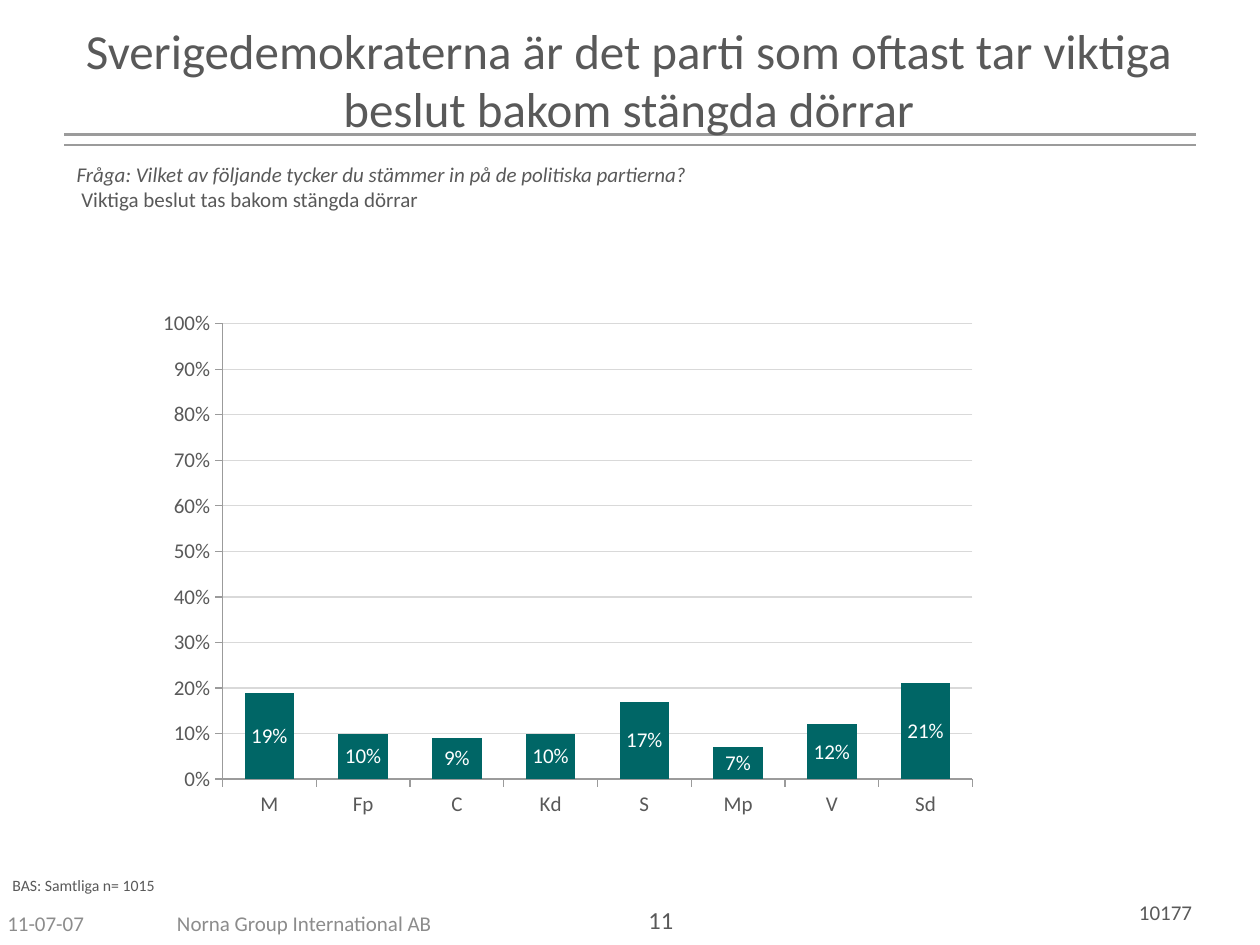
"""Build a slide with a column chart of parties seen as deciding behind closed doors."""
from lxml.etree import SubElement
from pptx import Presentation
from pptx.chart.data import CategoryChartData
from pptx.dml.color import RGBColor
from pptx.enum.chart import XL_CHART_TYPE, XL_LABEL_POSITION, XL_TICK_MARK
from pptx.enum.shapes import MSO_CONNECTOR
from pptx.enum.text import MSO_ANCHOR, PP_ALIGN
from pptx.oxml.ns import qn
from pptx.util import Inches, Pt

COLORS = {
    "text": "595959",
    "footer": "8C8C8C",
    "rule": "9B9B9B",
    "grid": "D9D9D9",
    "bar": "006666",
    "label": "FFFFFF",
}
SHARES = {"M": 0.19, "Fp": 0.1, "C": 0.09, "Kd": 0.1, "S": 0.17, "Mp": 0.07, "V": 0.12, "Sd": 0.21}
PLOT_AREA = {"x": 0.071, "y": 0.143, "w": 0.774, "h": 0.729}


def color(name):
    """Return the named colour."""
    return RGBColor.from_string(COLORS[name])


def style_font(font, size, color_name="text"):
    """Set the typeface, size and colour of a font."""
    font.name = "Calibri"
    font.size = Pt(size)
    font.color.rgb = color(color_name)


def add_text(page, place, text, size, align=PP_ALIGN.LEFT, anchor=MSO_ANCHOR.TOP, color_name="text"):
    """Add a wrapped text box and return its paragraph."""
    box = page.shapes.add_textbox(*map(Inches, place))
    frame = box.text_frame
    frame.word_wrap = True
    frame.vertical_anchor = anchor
    para = frame.paragraphs[0]
    para.alignment = align
    style_font(para.font, size, color_name)
    para.add_run().text = text
    return para


def add_question(page):
    """Add the survey question in italics with the statement below it."""
    question = "Fråga: Vilket av följande tycker du stämmer in på de politiska partierna? "
    para = add_text(page, (0.51, 1.23, 8.98, 0.71), question, 12)
    para.runs[0].font.italic = True
    para.add_line_break()
    para.add_run().text = " Viktiga beslut tas bakom stängda dörrar"


def add_rule(page, top):
    """Add a horizontal rule under the title."""
    rule = page.shapes.add_connector(
        MSO_CONNECTOR.STRAIGHT, Inches(0.51), Inches(top), Inches(9.49), Inches(top))
    rule.line.color.rgb = color("rule")
    rule.line.width = Pt(1.5)
    SubElement(rule._element.spPr, qn("a:effectLst"))


def style_axis(axis):
    """Give an axis its ticks, line and label font."""
    axis.major_tick_mark = XL_TICK_MARK.OUTSIDE
    axis.minor_tick_mark = XL_TICK_MARK.NONE
    axis.format.line.color.rgb = color("rule")
    axis.format.line.width = Pt(0.75)
    style_font(axis.tick_labels.font, 12)


def place_plot(chart):
    """Fix the inner plot area as fractions of the chart."""
    area = chart._chartSpace.chart.plotArea
    layout = area.find(qn("c:layout"))
    if layout is None:
        layout = SubElement(area, qn("c:layout"))
        area.insert(0, layout)
    manual = SubElement(layout, qn("c:manualLayout"))
    settings = {"layoutTarget": "inner", "xMode": "edge", "yMode": "edge", **PLOT_AREA}
    for tag, value in settings.items():
        SubElement(manual, qn(f"c:{tag}")).set("val", str(value))


def add_share_chart(page):
    """Add the column chart of shares per party."""
    data = CategoryChartData(number_format="0%")
    data.categories = list(SHARES)
    data.add_series("Series 1", list(SHARES.values()))
    place = map(Inches, (1.22, 1.86, 7.69, 4.96))
    chart = page.shapes.add_chart(XL_CHART_TYPE.COLUMN_STACKED, *place, data).chart
    chart.has_legend = False
    chart.has_title = False
    style_font(chart.font, 18)
    place_plot(chart)

    style_axis(chart.category_axis)
    axis = chart.value_axis
    style_axis(axis)
    axis.minimum_scale, axis.maximum_scale, axis.major_unit = 0, 1, 0.1
    axis.tick_labels.number_format = "0%"
    axis.tick_labels.number_format_is_linked = False
    grid = axis.major_gridlines.format.line
    grid.color.rgb = color("grid")
    grid.width = Pt(0.75)

    plot = chart.plots[0]
    plot.gap_width = 89
    plot.overlap = 100
    plot.vary_by_categories = False
    series = plot.series[0]
    series.format.fill.solid()
    series.format.fill.fore_color.rgb = color("bar")
    labels = series.data_labels
    labels.show_value = True
    labels.number_format = "0%"
    labels.number_format_is_linked = False
    labels.position = XL_LABEL_POSITION.CENTER
    style_font(labels.font, 12, "label")


def add_footer(page):
    """Add the base, date, sender, page number and project number."""
    center, middle = PP_ALIGN.CENTER, MSO_ANCHOR.MIDDLE
    add_text(page, (6.96, 7.09, 2.6, 0.3), "10177", 12, PP_ALIGN.RIGHT)
    add_text(page, (-0.04, 7.13, 2.33, 0.4), "11-07-07", 12, anchor=middle, color_name="footer")
    add_text(page, (0.83, 7.13, 3.17, 0.4), "Norna Group International AB", 12, center, middle, "footer")
    add_text(page, (4.08, 7.13, 2.33, 0.4), "11", 14, center)
    add_text(page, (0, 6.9, 3.39, 0.25), "BAS: Samtliga n= 1015", 9)


def main():
    """Build and save the slide."""
    deck = Presentation()
    deck.slide_width, deck.slide_height = Inches(10), Inches(7.5)
    page = deck.slides.add_slide(deck.slide_layouts[6])
    for top in (1.07, 1.15):
        add_rule(page, top)
    add_share_chart(page)
    title = "Sverigedemokraterna är det parti som oftast tar viktiga beslut bakom stängda dörrar"
    add_text(page, (0.49, 0.11, 9, 1.25), title, 28, PP_ALIGN.CENTER)
    add_question(page)
    add_footer(page)
    deck.save("out.pptx")


if __name__ == "__main__":
    main()
